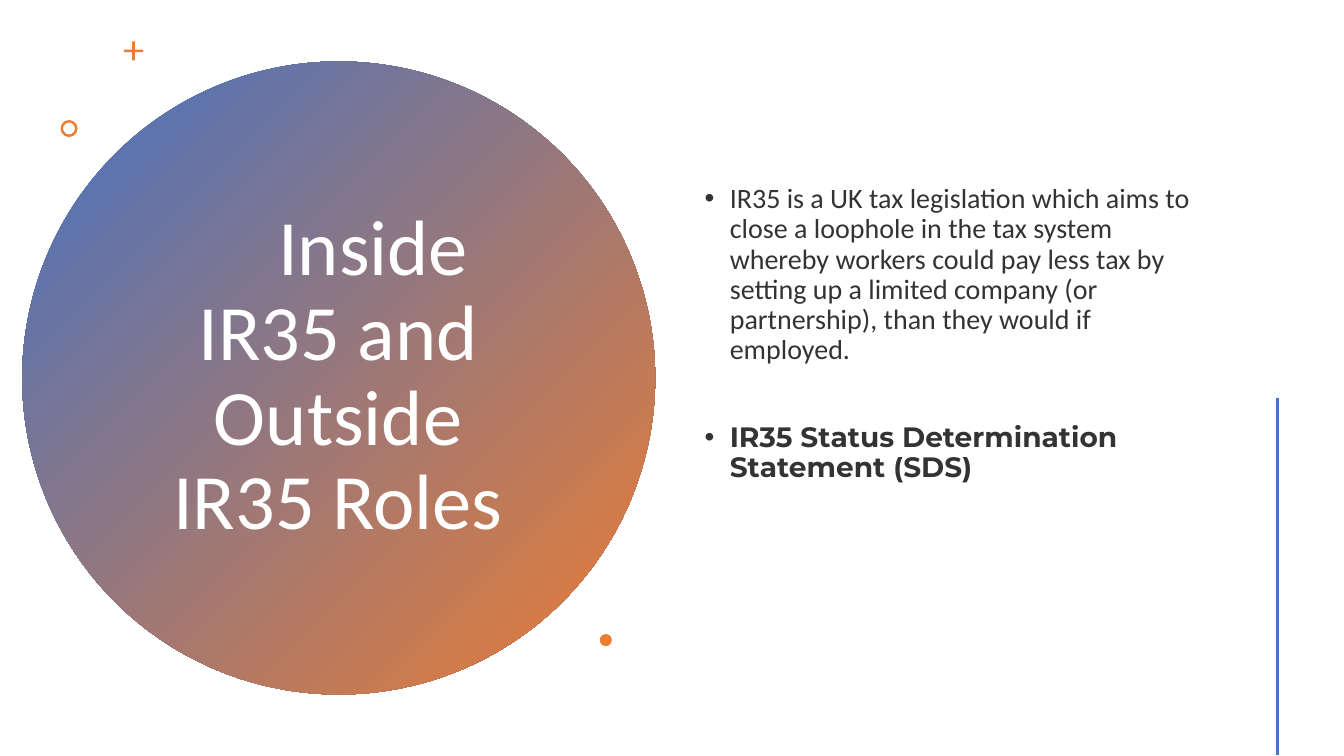
"""Build the IR35 roles slide."""
from lxml import etree
from pptx import Presentation
from pptx.dml.color import RGBColor
from pptx.enum.shapes import MSO_CONNECTOR, MSO_SHAPE
from pptx.enum.text import MSO_ANCHOR, MSO_AUTO_SIZE, PP_ALIGN
from pptx.oxml.ns import qn
from pptx.util import Pt

BLUE = RGBColor(0x44, 0x72, 0xC4)
ORANGE = RGBColor(0xED, 0x7D, 0x31)
WHITE = RGBColor(0xFF, 0xFF, 0xFF)
BLACK = RGBColor(0x00, 0x00, 0x00)
OVAL, CROSS, RING = MSO_SHAPE.OVAL, MSO_SHAPE.CROSS, MSO_SHAPE.DONUT
STRAIGHT = MSO_CONNECTOR.STRAIGHT
MIDDLE, CENTER = MSO_ANCHOR.MIDDLE, PP_ALIGN.CENTER
FIXED = MSO_AUTO_SIZE.NONE

POINTS = [
    ("IR35 is a UK tax legislation which aims to close a loophole in the tax "
     "system whereby workers could pay less tax by setting up a limited "
     "company (or partnership), than they would if employed.",
     "Calibri", False, 10),
    ("IR35 Status Determination Statement (SDS)", "Montserrat", True, 41),
]


def add_mark(slide, kind, left, top, size, ratio=None):
    shape = slide.shapes.add_shape(kind, Pt(left), Pt(top), Pt(size), Pt(size))
    shape.shadow.inherit = False
    shape.line.fill.background()
    shape.fill.solid()
    shape.fill.fore_color.rgb = ORANGE
    if ratio is not None:
        shape.adjustments[0] = ratio
    return shape


def blend(shape):
    shape.fill.gradient()
    shape.fill.gradient_angle = 315
    for stop, color, place in zip(shape.fill.gradient_stops, (BLUE, ORANGE), (0, 1)):
        stop.color.rgb = color
        stop.position = place


def place(holder, left, top, width, height):
    holder.left, holder.top = Pt(left), Pt(top)
    holder.width, holder.height = Pt(width), Pt(height)
    frame = holder.text_frame
    frame.word_wrap = True
    frame.auto_size = FIXED
    frame.vertical_anchor = MIDDLE
    holder._element.getparent().append(holder._element)
    return frame


def add_run(para, text, face, size, color, bold=False):
    run = para.add_run()
    run.text = text
    font = run.font
    font.name, font.size, font.bold = face, Pt(size), bold
    font.color.rgb = color
    return run


def indent(para, left, first):
    props = para._p.get_or_add_pPr()
    props.set("marL", str(Pt(left)))
    props.set("indent", str(Pt(first)))
    para.line_spacing = 0.9
    return props


def fill_title(slide):
    para = place(slide.shapes.title, 97.92, 101.52, 287.28, 336.24).paragraphs[0]
    para.alignment = CENTER
    para.space_before = Pt(0)
    indent(para, 0, 50)
    add_run(para, "Inside IR35 and Outside IR35 Roles", "Calibri", 56, WHITE)


def fill_body(slide):
    frame = place(slide.placeholders[1], 496.08, 41.04, 375.84, 459.36)
    frame.margin_bottom = Pt(67.6)
    for i, (text, face, bold, gap) in enumerate(POINTS):
        para = frame.add_paragraph() if i else frame.paragraphs[0]
        props = indent(para, 18, -18)
        para.space_before = Pt(gap)
        etree.SubElement(props, qn("a:buFont")).set("typeface", "Arial")
        etree.SubElement(props, qn("a:buChar")).set("char", "•")
        run = add_run(para, text, face, 20, BLACK, bold)
        tone = run._r.find(".//" + qn("a:srgbClr"))
        etree.SubElement(tone, qn("a:alpha")).set("val", "80000")


def add_rule(slide, x, top, bottom):
    rule = slide.shapes.add_connector(STRAIGHT, Pt(x), Pt(top), Pt(x), Pt(bottom))
    rule.line.color.rgb = BLUE
    rule.line.width = Pt(2)
    etree.SubElement(rule._element.spPr, qn("a:effectLst"))


def main():
    deck = Presentation()
    deck.slide_width, deck.slide_height = Pt(960), Pt(540)
    slide = deck.slides.add_slide(deck.slide_layouts[1])
    blend(add_mark(slide, OVAL, 15.84, 43.92, 452.16))
    fill_title(slide)
    add_mark(slide, CROSS, 88.56, 29.52, 13.68, 0.43)
    add_mark(slide, RING, 43.2, 85.68, 12.24, 0.15)
    fill_body(slide)
    add_mark(slide, OVAL, 428.4, 452.88, 8.64)
    add_rule(slide, 912.24, 284.4, 539.28)
    deck.save("out.pptx")


if __name__ == "__main__":
    main()
